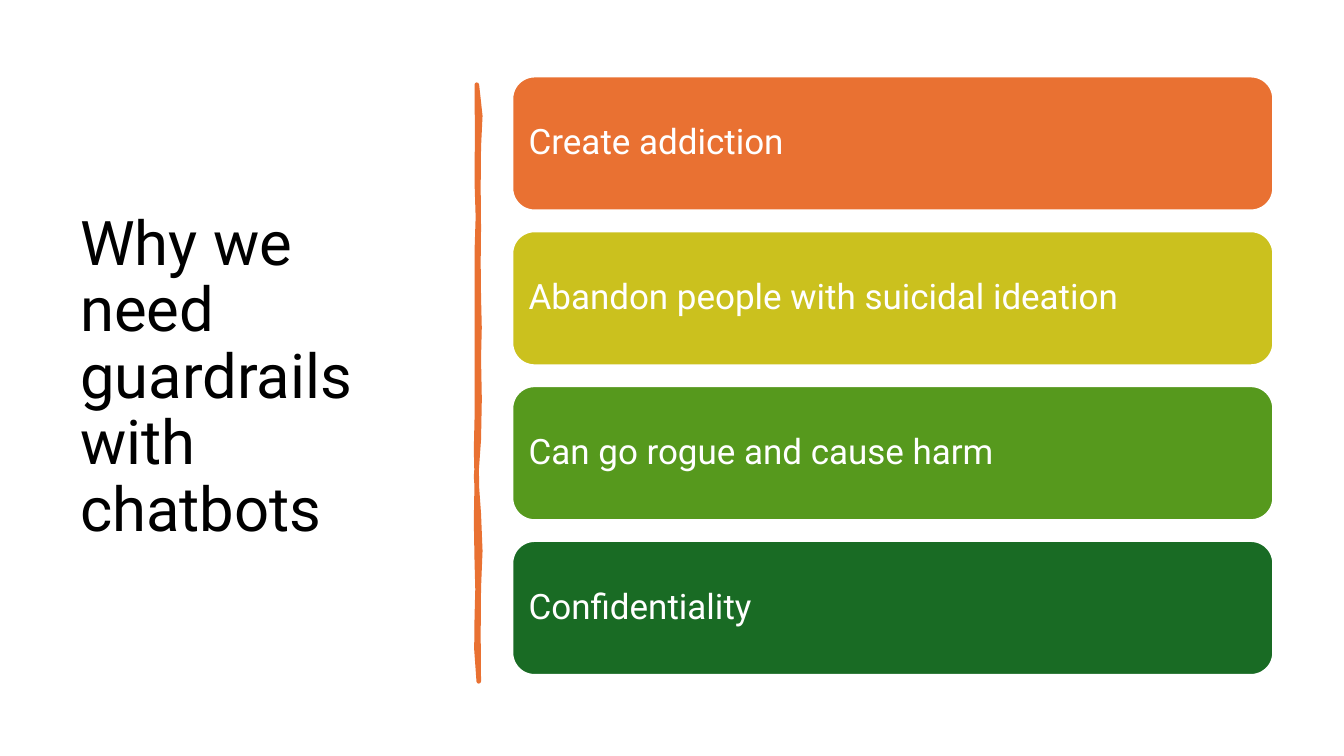
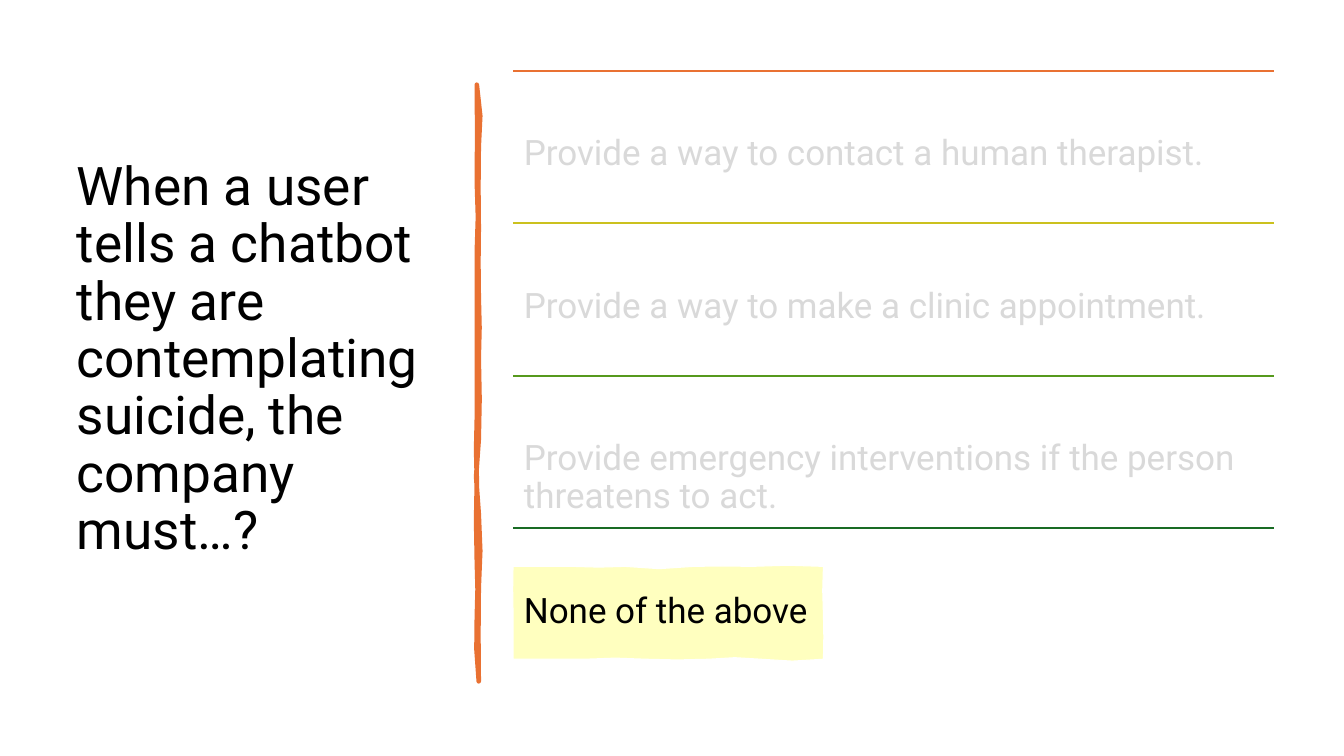
from dataclasses import dataclass

from pptx import Presentation
from pptx.dml import color as dml
from pptx.enum import shapes, text
from pptx.oxml import ns, xmlchemy
from pptx.util import Pt

FONT = "Roboto"
COLORS = {
    "orange": "E97132",
    "olive": "CBC11E",
    "green": "56991D",
    "forest": "196B24",
    "white": "FFFFFF",
    "black": "000000",
    "faded": "D9D9D9",
    "yellow": "FFFF00",
}
SEQUENCE = ("orange", "olive", "green", "forest")

# Shared geometry of the right-hand column
BAR_LEFT, RULE_LEFT, COLUMN_WIDTH = 365.9, 366.7, 543.6
BAR_TOP, BAR_HEIGHT, BAR_PITCH = 54.6, 95.8, 110.6
RULE_TOP, RULE_PITCH = 50.4, 109
CURVE_STEPS = 2


@dataclass(frozen=True)
class Box:
    left: float
    top: float
    width: float
    height: float


@dataclass(frozen=True)
class Answer:
    wording: str
    color: str = "faded"


@dataclass(frozen=True)
class Side:
    """One wavy side: each wave is (end position, first bow, second bow)."""
    start: float
    level: float
    vertical: bool
    waves: tuple[tuple[float, float, float], ...]

    def points(self) -> list[tuple[float, float]]:
        result, begin = [], self.start
        for end, bow1, bow2 in self.waves:
            for step in range(1, CURVE_STEPS + 1):
                t = step / CURVE_STEPS
                along = begin + (end - begin) * t
                across = self.level + 3 * t * (1 - t) * (bow1 * (1 - t) + bow2 * t)
                result.append((across, along) if self.vertical else (along, across))
            begin = end
        return result


DIVIDER = (
    Side(60.5, 342, True, (
        (105, 1.4, 1.4), (163, -1.4, 0.7), (212, -0.7, 0), (256, 0, 1.4),
        (314, -1.4, 2.9), (367, -2.9, -2.2), (420, 1.4, 1.4), (486.7, -1.4, 0.7))),
    Side(486.7, 340.6, True, (
        (441, 0.7, -1.4), (401, 0.7, 0.7), (343, -0.7, -0.7), (299, 0, -1.4),
        (241, 0.7, -0.7), (180, 0.7, -0.7), (130, 0.7, 1.4), (60.5, -2.2, 2.9))),
)
HIGHLIGHT = (
    Side(366.5, 404.6, False, (
        (409, -1.4, 1.4), (446.4, -0.7, 2.2), (495.4, -1.4, 5.8),
        (537, -5, 4.3), (588.2, -3.6, 1.4))),
    Side(404.6, 588.2, True, ((439.2, 2.9, -4.3), (470.9, 3.6, -2.9))),
    Side(588.2, 470.9, False, (
        (543.6, 4.3, -0.7), (506.2, 0.7, -3.6), (461.5, 3.6, -2.2),
        (417.6, 2.2, -4.3), (366.5, 4.3, -4.3))),
    Side(470.9, 366.5, True, ((437, -1.4, 1.4), (404.6, -1.4, 0.7))),
)

REASONS = (
    "Create addiction",
    "Abandon people with suicidal ideation",
    "Can go rogue and cause harm",
    "Confidentiality",
)
ANSWERS = (
    Answer("Provide a way to contact a human therapist."),
    Answer("Provide a way to make a clinic appointment."),
    Answer("Provide emergency interventions if the person threatens to act."),
    Answer("None of the above", "black"),
)


def rgb(name: str) -> dml.RGBColor:
    return dml.RGBColor.from_string(COLORS[name])


def paint(shape, fill: str, line: str, width: float) -> None:
    shape.shadow.inherit = False
    shape.fill.solid()
    shape.fill.fore_color.rgb = rgb(fill)
    shape.line.color.rgb = rgb(line)
    shape.line.width = Pt(width)


def write(shape, wording: str, size: float, color: str, inset: float = 7.2,
          top_inset: float = 3.6, anchor=text.MSO_ANCHOR.MIDDLE) -> None:
    frame = shape.text_frame
    frame.word_wrap = True
    frame.vertical_anchor = anchor
    frame.margin_left = frame.margin_right = Pt(inset)
    frame.margin_top, frame.margin_bottom = Pt(top_inset), Pt(3.6)
    paragraph = frame.paragraphs[0]
    paragraph.text = wording
    paragraph.alignment = text.PP_ALIGN.LEFT
    paragraph.line_spacing = 0.9
    paragraph.font.name = FONT
    paragraph.font.size = Pt(size)
    paragraph.font.color.rgb = rgb(color)


def add_text_box(slide, box: Box):
    return slide.shapes.add_textbox(
        Pt(box.left), Pt(box.top), Pt(box.width), Pt(box.height))


def add_outline(slide, sides: tuple[Side, ...], fill: str, line: str, width: float):
    points = [(Pt(x), Pt(y)) for side in sides for x, y in side.points()]
    builder = slide.shapes.build_freeform(*points[-1])
    builder.add_line_segments(points[:-1], close=True)
    outline = builder.convert_to_shape()
    paint(outline, fill, line, width)
    # Rounded line joins
    outline_line = outline._element.spPr.find(ns.qn("a:ln"))
    outline_line.append(xmlchemy.OxmlElement("a:round"))
    return outline


def add_frame(prs, title: str, size: float, box: Box):
    """Blank slide with the title on the left and the hand-drawn divider."""
    slide = prs.slides.add_slide(prs.slide_layouts[6])
    write(add_text_box(slide, box), title, size, "black")
    add_outline(slide, DIVIDER, "orange", "orange", 3.25)
    return slide


def add_bar(slide, index: int, reason: str, color: str) -> None:
    bar = slide.shapes.add_shape(
        shapes.MSO_SHAPE.ROUNDED_RECTANGLE, Pt(BAR_LEFT),
        Pt(BAR_TOP + index * BAR_PITCH), Pt(COLUMN_WIDTH), Pt(BAR_HEIGHT))
    paint(bar, color, "white", 1.5)
    write(bar, reason, 25, "white")


def add_answer(slide, index: int, answer: Answer, color: str) -> None:
    top = RULE_TOP + index * RULE_PITCH
    rule = slide.shapes.add_connector(
        shapes.MSO_CONNECTOR.STRAIGHT, Pt(RULE_LEFT), Pt(top),
        Pt(RULE_LEFT + COLUMN_WIDTH), Pt(top))
    rule.line.color.rgb = rgb(color)
    rule.line.width = Pt(1.5)
    rule._element.spPr.append(xmlchemy.OxmlElement("a:effectLst"))
    box = Box(RULE_LEFT, top, COLUMN_WIDTH, RULE_PITCH)
    write(add_text_box(slide, box), answer.wording, 25, answer.color,
          inset=7.5, top_inset=46.4, anchor=text.MSO_ANCHOR.TOP)


def build_reasons(prs) -> None:
    slide = add_frame(prs, "Why we need guardrails with chatbots", 44,
                      Box(50.2, 50.4, 269.3, 440))
    for index, (reason, color) in enumerate(zip(REASONS, SEQUENCE)):
        add_bar(slide, index, reason, color)


def build_question(prs) -> None:
    slide = add_frame(
        prs, "When a user tells a chatbot they are contemplating suicide, "
        "the company must…?", 38, Box(47.7, 37.4, 269.3, 440))
    # Translucent marker behind the correct answer
    marker = add_outline(slide, HIGHLIGHT, "yellow", "white", 0.75)
    tint = marker._element.spPr.find(ns.qn("a:solidFill")).find(ns.qn("a:srgbClr"))
    alpha = xmlchemy.OxmlElement("a:alpha")
    alpha.set("val", "25000")
    tint.append(alpha)
    for index, (answer, color) in enumerate(zip(ANSWERS, SEQUENCE)):
        add_answer(slide, index, answer, color)


def main() -> None:
    prs = Presentation()
    prs.slide_width, prs.slide_height = Pt(960), Pt(540)
    build_reasons(prs)
    build_question(prs)
    prs.save("out.pptx")


if __name__ == "__main__":
    main()
